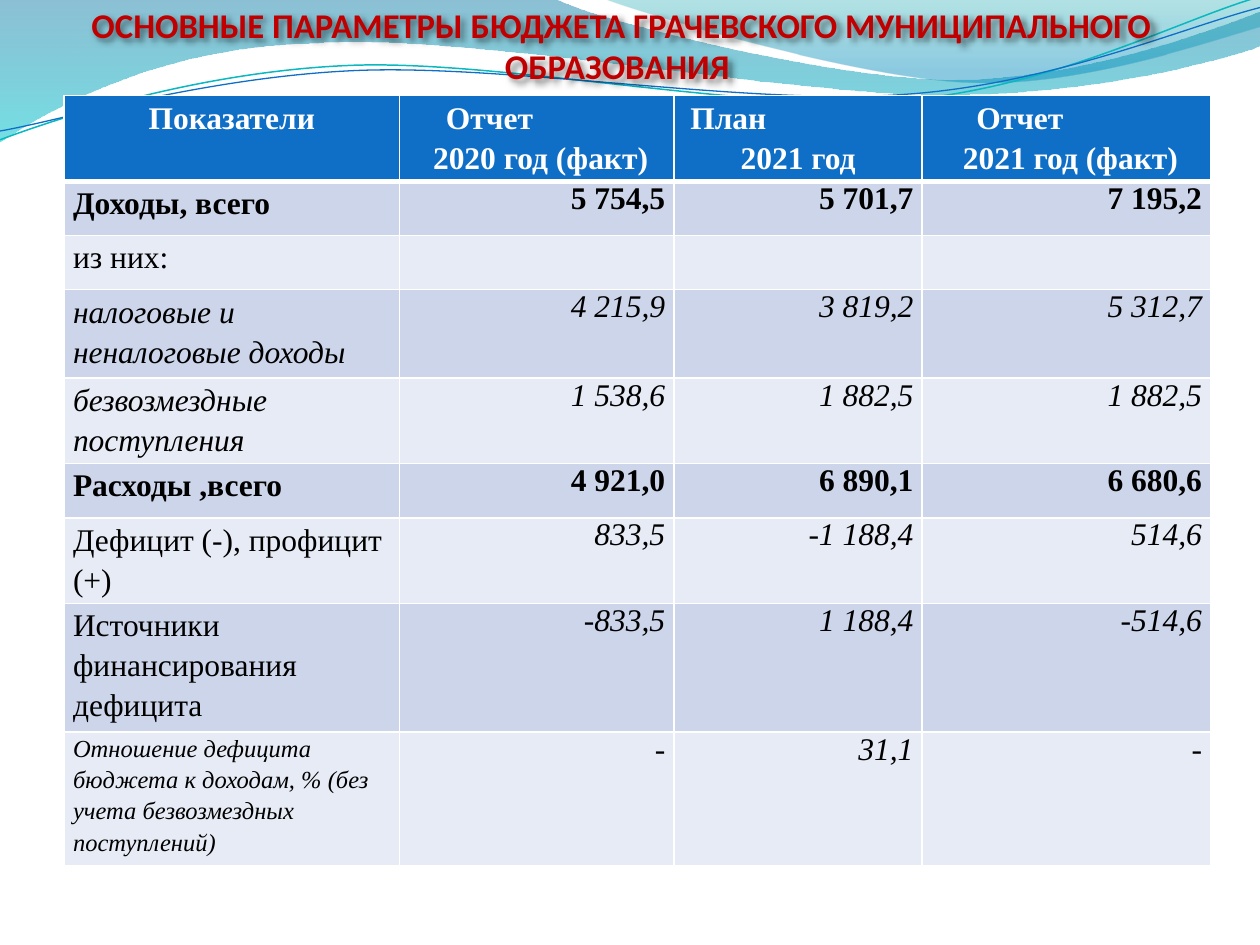
import copy

import pptx
import pptx.util
import pptx.dml.color
import pptx.enum.text
import pptx.oxml
import pptx.oxml.ns
from lxml import etree
from pptx.oxml.ns import qn
from pptx.util import Inches

COLORS = {
    "title": "C00000", "header": "0F6FC6", "odd": "CCD5EA", "even": "E7EBF5",
    "white": "FFFFFF", "black": "000000", "teal_line": "0AB8BF",
    "blue_line": "0F6FC6", "deep_blue": "0074A1", "aqua": "00C6CF",
    "teal": "00A1A9", "sky": "008BBF",
}
ALIGN = pptx.enum.text.PP_ALIGN
ANCHOR = pptx.enum.text.MSO_ANCHOR
SERIF = "Times New Roman"

# Each outline: start point, then (x, y) lines or six-number Bezier curves
BACK_WAVE = [(0, 0), (4.4, -0.01), (4.76, 0.17, 6.64, 0.63, 7.58, 0.63),
             (8.53, 0.63, 9.58, 0.26, 10, 0.09), (10.01, 0.36),
             (9.83, 0.44, 8.7, 0.76, 7.46, 0.75),
             (6.22, 0.75, 3.82, 0.28, 2.57, 0.34),
             (1.29, 0.36, 0.46, 0.83, -0.01, 1.13)]
FRONT_WAVE = [(4.79, -0.01), (5.09, 0.11, 6.82, 0.62, 7.69, 0.65),
              (8.56, 0.69, 9.61, 0.32, 10, 0.21), (10, 0)]
TEAL_CURVE = [(0, 1.11), (0.48, 0.93, 1.58, 0.57, 2.77, 0.52),
              (3.95, 0.47, 5.93, 0.89, 7.13, 0.8),
              (8.33, 0.71, 9.38, 0.15, 9.98, -0.02)]
BLUE_CURVE = [(0, 1.04), (0.47, 0.96, 1.64, 0.61, 2.83, 0.56),
              (4.03, 0.51, 5.97, 0.84, 7.17, 0.75),
              (8.36, 0.67, 9.41, 0.21, 10, 0.06)]

# Header lines: first line with its indent (None = centred), second line
HEADERS = [("Показатели", None, None),
           ("Отчет", 0.3, " 2020 год (факт)"),
           ("План", 0.06, "2021 год"),
           ("Отчет", 0.36, " 2021 год (факт)")]
# Label, values, bold, italic label, italic values, label size, row height
BUDGET = [
    ("Доходы, всего", ("5 754,5", "5 701,7", "7 195,2"), True, False, False, 18, 0.43),
    ("из них:", ("", "", ""), False, False, False, 18, 0.43),
    ("налоговые и неналоговые доходы", ("4 215,9", "3 819,2", "5 312,7"),
     False, True, True, 18, 0.7),
    ("безвозмездные поступления", ("1 538,6", "1 882,5", "1 882,5"),
     False, True, True, 18, 0.68),
    ("Расходы ,всего", ("4 921,0", "6 890,1", "6 680,6"), True, False, False, 18, 0.43),
    ("Дефицит (-), профицит (+)", ("833,5", "-1 188,4", "514,6"),
     False, False, True, 18, 0.68),
    ("Источники финансирования дефицита", ("-833,5", "1 188,4", "-514,6"),
     False, False, True, 18, 1.02),
    ("Отношение дефицита бюджета к доходам, % (без учета безвозмездных поступлений)",
     ("-", "31,1", "-"), False, True, True, 14, 1.06),
]
HEADER_HEIGHT = 0.68
COLUMN_WIDTHS = (2.66, 2.18, 1.97, 2.29)


def rgb(name):
    return pptx.dml.color.RGBColor.from_string(COLORS[name])


def add_outline(slide, left, top, outline, close):
    points = [(Inches(left + x), Inches(top + y))
              for segment in outline
              for x, y in zip(segment[::2], segment[1::2])]
    builder = slide.shapes.build_freeform(*points[0])
    builder.add_line_segments(points[1:], close=close)
    shape = builder.convert_to_shape()
    shape.shadow.inherit = False
    # Join each three points of a curve into one Bezier segment
    steps = iter(list(shape._element.spPr.iter(qn("a:lnTo"))))
    for segment in outline[1:]:
        parts = [next(steps) for _ in range(len(segment) // 2)]
        if len(parts) == 3:
            curve = etree.Element(qn("a:cubicBezTo"))
            parts[0].addprevious(curve)
            for part in parts:
                curve.append(part[0])
                part.getparent().remove(part)
    return shape


def add_waves(slide, left, top):
    # Translucent gradient waves: colour, position, opacity in percent
    for outline, stops in (
            (BACK_WAVE, (("deep_blue", 0, 45), ("aqua", 1, 55))),
            (FRONT_WAVE, (("teal", 0, 30), ("sky", 0.8, 45)))):
        wave = add_outline(slide, left, top, outline, True)
        wave.line.fill.background()
        wave.fill.gradient()
        wave.fill.gradient_angle = 270
        for stop, (color, position, _) in zip(wave.fill.gradient_stops, stops):
            stop.color.rgb = rgb(color)
            stop.position = position
        tints = wave._element.spPr.iter(qn("a:srgbClr"))
        for tint, (_, _, opacity) in zip(tints, stops):
            etree.SubElement(tint, qn("a:alpha"), val=str(opacity * 1000))
    # Thin curves
    for outline, color, width in ((TEAL_CURVE, "teal_line", 0.85),
                                  (BLUE_CURVE, "blue_line", 0.75)):
        curve = add_outline(slide, left, top, outline, False)
        curve.fill.background()
        curve.line.color.rgb = rgb(color)
        curve.line.width = pptx.util.Pt(width)


def style_font(font, name, size, color, bold, italic=False):
    font.name, font.size = name, pptx.util.Pt(size)
    font.color.rgb = rgb(color)
    font.bold, font.italic = bold, italic


def add_title(slide, left, top, width, height):
    title = slide.shapes.title
    title.left, title.top = Inches(left), Inches(top)
    title.width, title.height = Inches(width), Inches(height)
    frame = title.text_frame
    frame.auto_size = pptx.enum.text.MSO_AUTO_SIZE.NONE
    frame.vertical_anchor = ANCHOR.BOTTOM
    frame.margin_left = frame.margin_right = frame.margin_bottom = 0
    frame.margin_top = Inches(0.05)
    heading = frame.paragraphs[0]
    heading.text = "ОСНОВНЫЕ ПАРАМЕТРЫ БЮДЖЕТА ГРАЧЕВСКОГО МУНИЦИПАЛЬНОГО ОБРАЗОВАНИЯ \v"
    heading.alignment = ALIGN.CENTER
    run = heading.runs[0]
    style_font(run.font, "Calibri", 19.8, "title", True)
    # The closing break keeps the heading's size; the line after it is taller
    line_break = heading._p.find(qn("a:br"))
    line_break.append(copy.deepcopy(run._r.rPr))
    etree.SubElement(heading._p, qn("a:endParaRPr"), sz="4500")
    # Soft shadow
    title._element.spPr.append(pptx.oxml.parse_xml(
        f'<a:effectLst {pptx.oxml.ns.nsdecls("a")}><a:outerShdw blurRad="38100" '
        f'dist="38100" dir="2700000"><a:srgbClr val="{COLORS["black"]}">'
        '<a:alpha val="50000"/></a:srgbClr></a:outerShdw></a:effectLst>'))
    # Bring the title in front of the waves
    slide.shapes._spTree.append(title._element)


def style_cell(cell, fill, bottom_border=1):
    cell.margin_left = cell.margin_right = Inches(0.07)
    cell.margin_top = cell.margin_bottom = 0
    cell.vertical_anchor = ANCHOR.TOP
    borders = {"L": 1, "R": 1, "T": 1, "B": bottom_border}
    for side, width in borders.items():
        cell._tc.get_or_add_tcPr().append(pptx.oxml.parse_xml(
            f'<a:ln{side} {pptx.oxml.ns.nsdecls("a")} w="{width * 12700}"><a:solidFill>'
            f'<a:srgbClr val="{COLORS["white"]}"/></a:solidFill></a:ln{side}>'))
    cell.fill.solid()
    cell.fill.fore_color.rgb = rgb(fill)


def add_budget_table(slide, left, top):
    heights = [HEADER_HEIGHT] + [row[-1] for row in BUDGET]
    table = slide.shapes.add_table(
        len(heights), len(COLUMN_WIDTHS), Inches(left), Inches(top),
        Inches(sum(COLUMN_WIDTHS)), Inches(sum(heights))).table
    for column, width in zip(table.columns, COLUMN_WIDTHS):
        column.width = Inches(width)
    for row, height in zip(table.rows, heights):
        row.height = Inches(height)

    # Header row
    for column, (first, indent, second) in enumerate(HEADERS):
        cell = table.cell(0, column)
        style_cell(cell, "header", bottom_border=3)
        cell.text = f"{first}\n{second}" if second else first
        for line in cell.text_frame.paragraphs:
            line.alignment = ALIGN.CENTER
            line.line_spacing = 1.15
            style_font(line.font, SERIF, 18, "white", True)
        if indent is not None:
            first_line = cell.text_frame.paragraphs[0]
            first_line.alignment = ALIGN.LEFT
            first_line._p.get_or_add_pPr().set("marL", str(Inches(indent)))

    # Budget rows
    for row, (label, values, bold, label_italic, value_italic, size, _) in enumerate(BUDGET, 1):
        for column, text in enumerate((label, *values)):
            cell = table.cell(row, column)
            style_cell(cell, "odd" if row % 2 else "even")
            cell.text = text
            entry = cell.text_frame.paragraphs[0]
            if column == 0:
                entry.line_spacing = 1.15
                style_font(entry.font, SERIF, size, "black", bold, label_italic)
            else:
                entry.alignment = ALIGN.RIGHT
                style_font(entry.font, SERIF, 18, "black", bold, value_italic)


def main():
    deck = pptx.Presentation()
    deck.slide_width, deck.slide_height = Inches(10), Inches(7.5)
    slide = deck.slides.add_slide(deck.slide_layouts[5])
    add_waves(slide, 0, 0)
    add_title(slide, 0.43, 0.84, 9, 0.6)
    add_budget_table(slide, 0.51, 0.76)
    deck.save("out.pptx")


if __name__ == "__main__":
    main()
